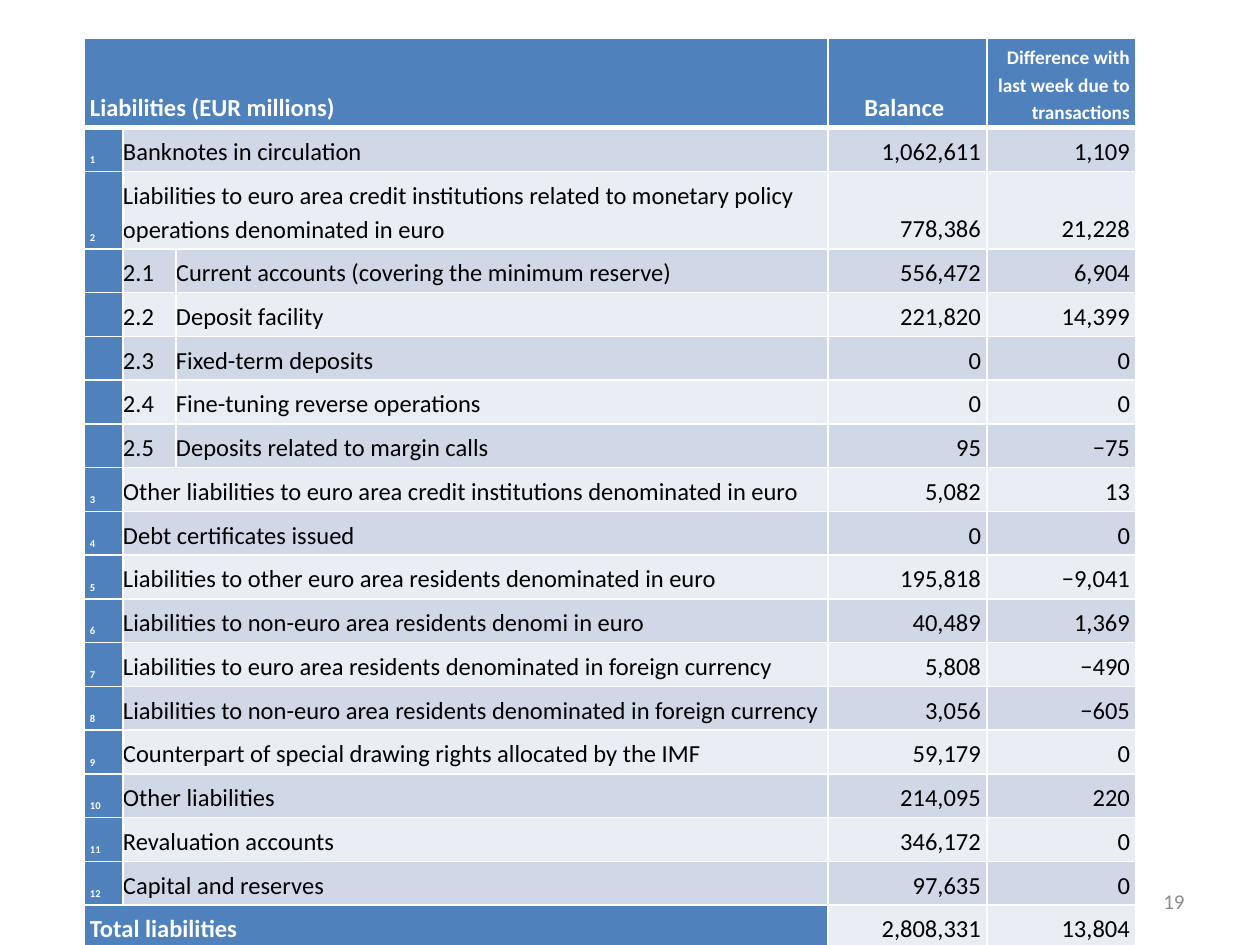
import pptx
import pptx.util
import pptx.dml.color
import pptx.enum.text
import lxml.etree

PX = 914400 / 126
ALIGN = pptx.enum.text.PP_ALIGN
ANCHOR = pptx.enum.text.MSO_ANCHOR
THEME = {
    "font": "Calibri",
    "blue": "4F81BD",
    "bands": ("D0D8E8", "E9EDF4"),
    "white": "FFFFFF",
    "black": "000000",
    "grey": "8C8C8C",
    "body": 14,
    "small_heading": 11,
    "page_number": 12,
    "index": 6,
}


def write_text(frame, text, size=THEME["body"], color=THEME["black"], bold=False,
               align=ALIGN.LEFT, spacing=1.15):
    paragraph = frame.paragraphs[0]
    paragraph.alignment = align
    paragraph.line_spacing = spacing
    if not text:
        paragraph._p.get_or_add_endParaRPr().set("sz", str(size * 100))
        return
    run = paragraph.add_run()
    run.text = text
    run.font.name = THEME["font"]
    run.font.size = pptx.util.Pt(size)
    run.font.bold = bold
    run.font.color.rgb = pptx.dml.color.RGBColor.from_string(color)


def style_cell(cell, fill, left=0, top=1, bottom=1):
    cell.vertical_anchor = ANCHOR.BOTTOM
    cell.margin_left = round(left * PX)
    cell.margin_right = round(6 * PX)
    cell.margin_top = cell.margin_bottom = round(5 * PX)
    properties = cell._tc.get_or_add_tcPr()
    namespace = "{http://schemas.openxmlformats.org/drawingml/2006/main}"
    for side, width in (("L", 1), ("R", 1), ("T", top), ("B", bottom)):
        line = lxml.etree.SubElement(properties, namespace + "ln" + side, w=str(pptx.util.Pt(width)))
        line_fill = lxml.etree.SubElement(line, namespace + "solidFill")
        lxml.etree.SubElement(line_fill, namespace + "srgbClr", val=THEME["white"])
    cell.fill.solid()
    cell.fill.fore_color.rgb = pptx.dml.color.RGBColor.from_string(fill)


presentation = pptx.Presentation()
presentation.slide_width = round(1260 * PX)
presentation.slide_height = round(945 * PX)
slide = presentation.slides.add_slide(presentation.slide_layouts[6])

page_number = slide.shapes.add_textbox(*(round(n * PX) for n in (903, 876, 294, 50)))
page_number.text_frame.word_wrap = True
page_number.text_frame.vertical_anchor = ANCHOR.MIDDLE
write_text(page_number.text_frame, "19", size=THEME["page_number"], color=THEME["grey"],
           align=ALIGN.RIGHT, spacing=1.0)

liabilities = [
    ("1", "Banknotes in circulation", "1,062,611", "1,109"),
    ("2", "Liabilities to euro area credit institutions related to monetary policy "
          "operations denominated in euro", "778,386", "21,228"),
    ("2.1", "Current accounts (covering the minimum reserve)", "556,472", "6,904"),
    ("2.2", "Deposit facility", "221,820", "14,399"),
    ("2.3", "Fixed-term deposits", "0", "0"),
    ("2.4", "Fine-tuning reverse operations", "0", "0"),
    ("2.5", "Deposits related to margin calls", "95", "−75"),
    ("3", "Other liabilities to euro area credit institutions denominated in euro", "5,082", "13"),
    ("4", "Debt certificates issued", "0", "0"),
    ("5", "Liabilities to other euro area residents denominated in euro", "195,818", "−9,041"),
    ("6", "Liabilities to non-euro area residents denomi in euro", "40,489", "1,369"),
    ("7", "Liabilities to euro area residents denominated in foreign currency", "5,808", "−490"),
    ("8", "Liabilities to non-euro area residents denominated in foreign currency", "3,056", "−605"),
    ("9", "Counterpart of special drawing rights allocated by the IMF", "59,179", "0"),
    ("10", "Other liabilities", "214,095", "220"),
    ("11", "Revaluation accounts", "346,172", "0"),
    ("12", "Capital and reserves", "97,635", "0"),
    ("", "Total liabilities", "2,808,331", "13,804"),
]
column_widths = [39, 53, 652, 159, 149]
row_heights = [88, 42, 76] + [42] * (len(liabilities) - 2)
table = slide.shapes.add_table(
    len(row_heights), len(column_widths), round(84 * PX), round(38 * PX),
    round(sum(column_widths) * PX), round(sum(row_heights) * PX)).table
table.first_row = False
table.horz_banding = False
for column, width in zip(table.columns, column_widths):
    column.width = round(width * PX)
for row, height in zip(table.rows, row_heights):
    row.height = round(height * PX)

for column in range(5):
    style_cell(table.cell(0, column), THEME["blue"], left=0 if column else 6, bottom=3)
table.cell(0, 0).merge(table.cell(0, 2))
for column, heading, size, align in (
    (0, "Liabilities (EUR millions)", THEME["body"], ALIGN.LEFT),
    (3, "Balance", THEME["body"], ALIGN.CENTER),
    (4, "Difference with last week due to transactions", THEME["small_heading"], ALIGN.RIGHT),
):
    write_text(table.cell(0, column).text_frame, heading, size=size, color=THEME["white"],
               bold=True, align=align)

for row, (number, label, balance, difference) in enumerate(liabilities, start=1):
    cells = [table.cell(row, column) for column in range(5)]
    is_total = not number
    is_subitem = "." in number
    band = THEME["bands"][(row - 1) % 2]
    for column, cell in enumerate(cells):
        is_blue = column == 0 or (is_total and column < 3)
        style_cell(cell, THEME["blue"] if is_blue else band, left=0 if column else 6,
                   top=3 if row == 1 else 1)
    if is_total:
        cells[0].merge(cells[2])
        write_text(cells[0].text_frame, label, color=THEME["white"], bold=True)
    else:
        write_text(cells[0].text_frame, "" if is_subitem else number, size=THEME["index"],
                   color=THEME["white"], bold=True)
        if is_subitem:
            write_text(cells[1].text_frame, number)
            write_text(cells[2].text_frame, label)
        else:
            cells[1].merge(cells[2])
            write_text(cells[1].text_frame, label)
    for cell, amount in zip(cells[3:], (balance, difference)):
        write_text(cell.text_frame, amount, align=ALIGN.RIGHT)

presentation.save("out.pptx")
